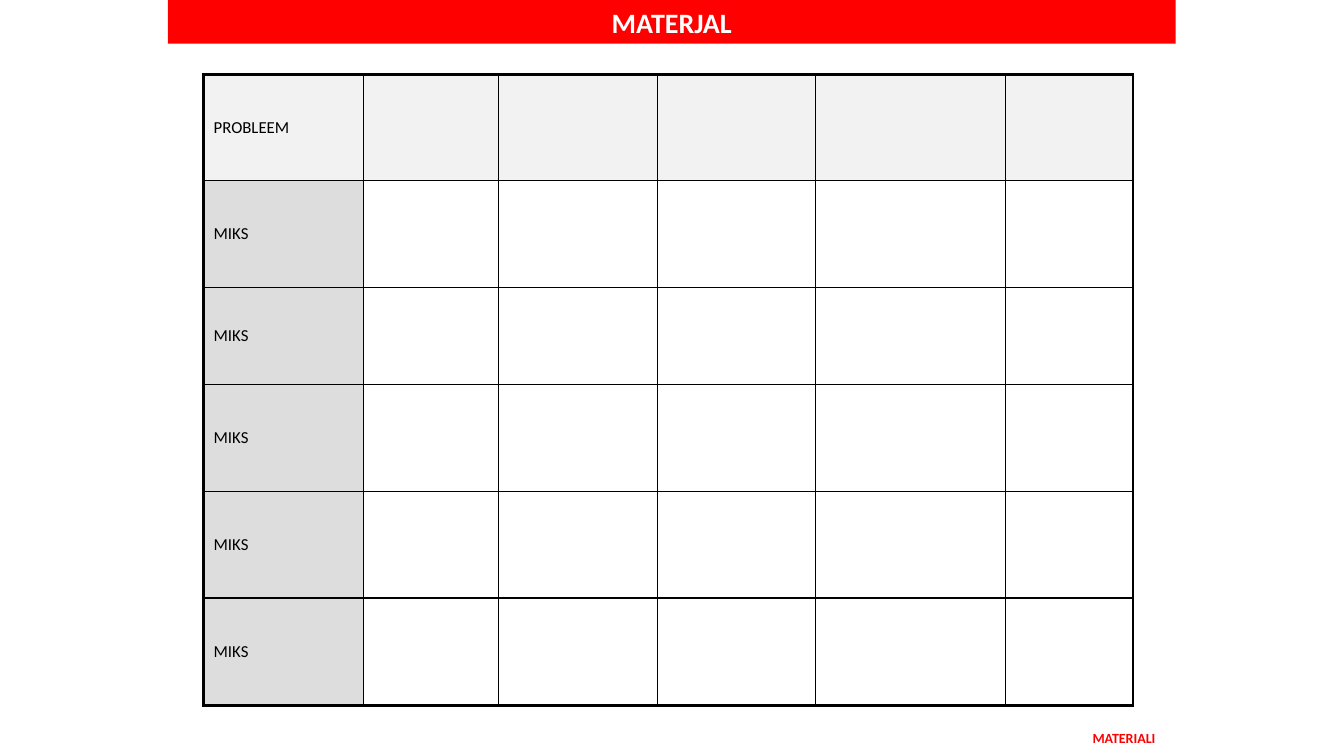
import dataclasses

import pptx
import pptx.dml.color
import pptx.enum.text
import pptx.oxml.ns
import pptx.util
from lxml import etree

Cm = pptx.util.Cm


@dataclasses.dataclass(frozen=True)
class Theme:
    font: str = "Calibri"
    red: str = "FF0000"
    white: str = "FFFFFF"
    black: str = "000000"
    header_gray: str = "E7E6E6"
    label_gray: str = "DDDDDD"
    header_opacity: int = 50
    title_size: int = 20
    cell_size: int = 12
    tag_size: int = 10
    outer_line: float = 2.25
    inner_line: float = 1


def rgb(color):
    return pptx.dml.color.RGBColor.from_string(color)


def add_child(parent, tag, **attributes):
    return etree.SubElement(parent, pptx.oxml.ns.qn(tag), **attributes)


class SlideBuilder:
    def __init__(self, slide, theme):
        self.slide = slide
        self.theme = theme

    def add_text(self, text_frame, text, size, color, bold=False, alignment=None):
        paragraph = text_frame.paragraphs[0]
        paragraph.alignment = alignment
        paragraph.space_before = pptx.util.Pt(0)
        run = paragraph.add_run()
        run.text = text
        run.font.name = self.theme.font
        run.font.size = pptx.util.Pt(size)
        run.font.bold = bold
        run.font.color.rgb = rgb(color)

    def title(self, text, left, top, width, height):
        shape = self.slide.shapes.title
        shape.left, shape.top = Cm(left), Cm(top)
        shape.width, shape.height = Cm(width), Cm(height)
        shape.fill.solid()
        shape.fill.fore_color.rgb = rgb(self.theme.red)
        frame = shape.text_frame
        frame.auto_size = pptx.enum.text.MSO_AUTO_SIZE.NONE
        frame.vertical_anchor = pptx.enum.text.MSO_ANCHOR.MIDDLE
        self.add_text(frame, text, self.theme.title_size, self.theme.white, True,
                      pptx.enum.text.PP_ALIGN.CENTER)

    def tag(self, text, left, top, width, height):
        shape = self.slide.shapes.add_textbox(Cm(left), Cm(top), Cm(width), Cm(height))
        shape.text_frame.word_wrap = True
        self.add_text(shape.text_frame, text, self.theme.tag_size, self.theme.red, True,
                      pptx.enum.text.PP_ALIGN.CENTER)

    def borders(self, cell, outer_sides):
        properties = cell._tc.get_or_add_tcPr()
        for side, outer in outer_sides.items():
            points = self.theme.outer_line if outer else self.theme.inner_line
            line = add_child(properties, f"a:ln{side}", w=str(int(pptx.util.Pt(points))))
            add_child(add_child(line, "a:solidFill"), "a:srgbClr", val=self.theme.black)

    def fill_cell(self, cell, row, column):
        if row and column:
            cell.fill.background()
            return
        cell.fill.solid()
        cell.fill.fore_color.rgb = rgb(self.theme.label_gray if row else self.theme.header_gray)
        if row == 0:
            fill = cell._tc.tcPr.find(pptx.oxml.ns.qn("a:solidFill"))
            add_child(fill[0], "a:alpha", val=str(self.theme.header_opacity * 1000))

    def table(self, labels, left, top, widths, heights):
        frame = self.slide.shapes.add_table(
            len(heights), len(widths), Cm(left), Cm(top), Cm(sum(widths)), Cm(sum(heights)))
        table = frame.table
        table.first_row = False
        table.horz_banding = False
        for column, width in zip(table.columns, widths):
            column.width = Cm(width)
        for row, height in zip(table.rows, heights):
            row.height = Cm(height)
        last_row, last_column = len(heights) - 1, len(widths) - 1
        for row in range(len(heights)):
            for column in range(len(widths)):
                cell = table.cell(row, column)
                self.borders(cell, {"L": column == 0, "R": column == last_column,
                                    "T": row == 0, "B": row == last_row})
                self.fill_cell(cell, row, column)
                cell.vertical_anchor = pptx.enum.text.MSO_ANCHOR.MIDDLE
            self.add_text(table.cell(row, 0).text_frame, labels[row],
                          self.theme.cell_size, self.theme.black)


def main():
    presentation = pptx.Presentation()
    presentation.slide_width = Cm(33.87)
    presentation.slide_height = Cm(19.05)
    slide = presentation.slides.add_slide(presentation.slide_layouts[5])
    builder = SlideBuilder(slide, Theme())
    builder.title("MATERJAL", 4.23, 0, 25.4, 1.1)
    builder.table(["PROBLEEM"] + ["MIKS"] * 5, 5.13, 1.88,
                  widths=[4.04, 3.4, 3.99, 3.99, 4.78, 3.22],
                  heights=[2.66, 2.7, 2.44, 2.71, 2.68, 2.71])
    builder.tag("MATERIALI", 27.03, 18.26, 2.59, 0.69)
    presentation.save("out.pptx")


if __name__ == "__main__":
    main()
